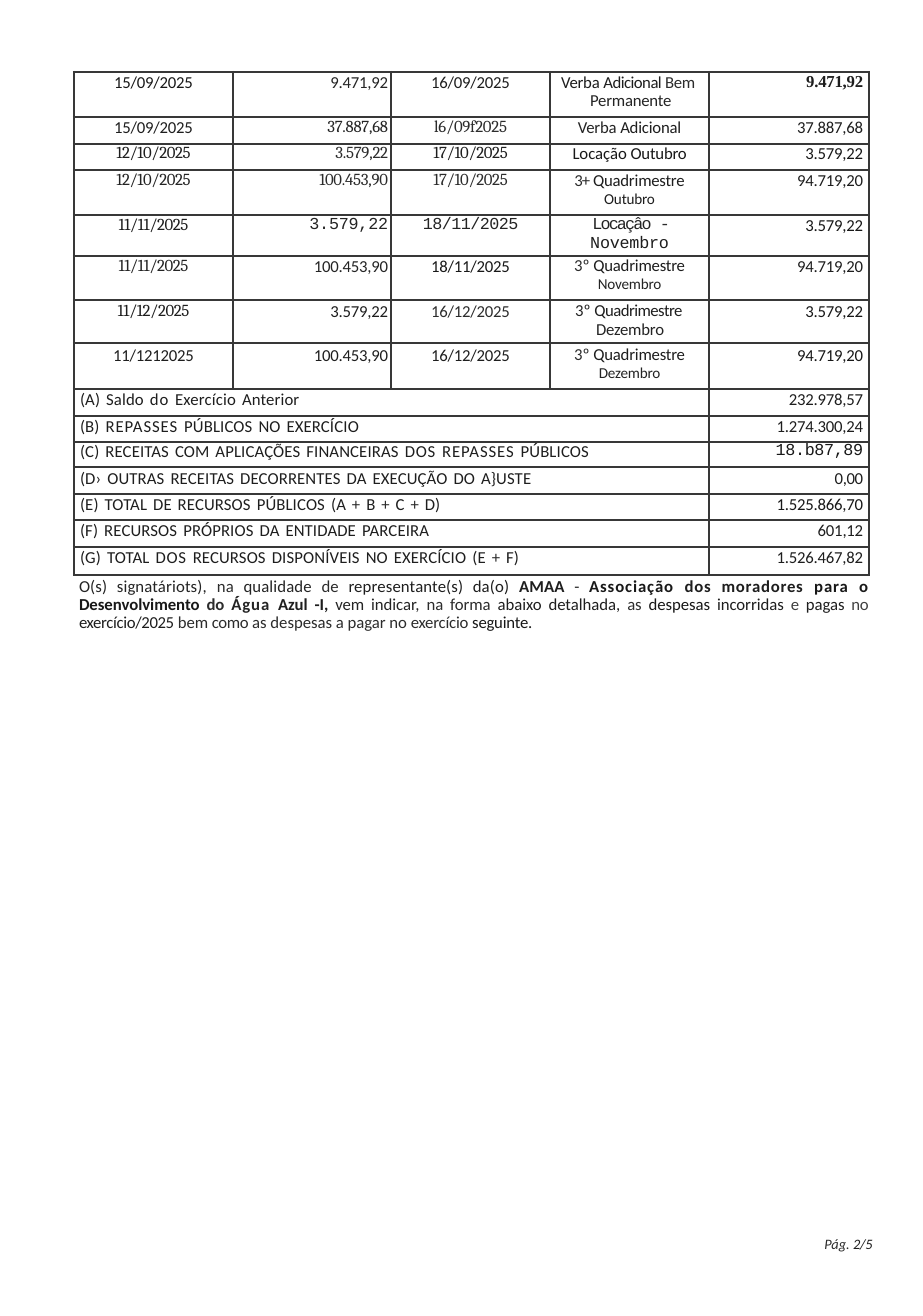
import pptx
import pptx.dml.color
import pptx.enum.text
import pptx.oxml
import pptx.oxml.ns
import pptx.util
from dataclasses import dataclass, field

Pt = pptx.util.Pt
ALIGN = pptx.enum.text.PP_ALIGN
EMU_PER_PX = 7958


@dataclass
class Theme:
    sans: str = "Calibri"
    serif: str = "Cambria"
    mono: str = "Courier New"
    times: str = "Times New Roman"
    body: float = 10.5
    small: float = 9.5
    page: float = 9
    rule: str = "383838"
    rule_width: float = 1.5
    word_gap: float = 1.3
    inks: dict = field(default_factory=lambda: {
        "deep": "181818", "dark": "1E1E1E", "mid": "242424",
        "soft": "2C2C2C", "pale": "404040"})


TH = Theme()


def run(text, ink="dark", spc=0, **fmt):
    return text, ink, spc, fmt


def par(*runs, **fmt):
    return runs, fmt


def date(text, ink="dark", spc=0, font=TH.sans):
    return [par(run(text, ink, spc, name=font), alignment=ALIGN.CENTER)]


def value(text, ink="dark", spc=0, font=TH.sans, **fmt):
    return [par(run(text, ink, spc, name=font, **fmt), alignment=ALIGN.RIGHT)]


def quarter(number, month, ink="mid", spc=0):
    """Two centred lines: the four-month period and, smaller, its month."""
    return [par(run(number, "soft", spc), run("Quadrimestre", "dark", -0.1),
                alignment=ALIGN.CENTER, line_spacing=Pt(12.4)),
            par(run(month, ink, -0.1, size=Pt(TH.small)),
                alignment=ALIGN.CENTER, line_spacing=Pt(11.2))]


def hanging(left, indent, *runs):
    return [par(*runs, line_spacing=Pt(11.4), left=left, indent=indent)]


def centred(*runs):
    return [par(*runs, alignment=ALIGN.CENTER)]


def label(text):
    """Summary label with widened word gaps and a few letterspaced words."""
    spread = {"do": 0.6, "REPASSES": 0.6, "DOS": 0.5}
    words = text.split(" ")
    runs = []
    for i, word in enumerate(words):
        ink = "soft" if word == "+" else "dark"
        runs.append(run(word, ink, spread.get(word, 0.1)))
        if i < len(words) - 1:
            runs.append(run(" ", ink, TH.word_gap))
    return [par(*runs, left=6)]


# (height, top inset, cells)
LEDGER = [
    (45, 1, [date("15/09/2025", "deep", -0.1), value("9.471,92", "mid", -0.1),
             date("16/09/2025", spc=-0.1),
             hanging(40, -29, run("Verba ", "dark", -0.1), run("Adicional ", "dark", -0.3),
                     run("Bem ", "soft", -0.2), run("Permanente", "mid", -0.1)),
             value("9.471,92", spc=-0.1, font=TH.times, bold=True)]),
    (27, 1, [date("15/09/2025", spc=-0.1), value("37.887,68", "mid", -0.1, TH.serif),
             date("l6/09f2025", "soft", -0.1, TH.serif),
             centred(run("Verba ", "mid", -0.1), run("Adicional", "dark", -0.1)),
             value("37.887,68", spc=-0.1)]),
    (26, 0, [date("12/10/2025", "dark", -0.2, TH.serif), value("3.579,22", "soft", -0.1, TH.serif),
             date("17/10/2025", "dark", -0.2, TH.serif),
             centred(run("Locação ", "deep"), run("Outubro", "deep", -0.1)),
             value("3.579,22", "deep", -0.1)]),
    (45, 1, [date("12/10/2025", "mid", -0.2, TH.serif),
             value("100.453,90", "soft", -0.1, TH.serif),
             date("17/10/2025", "soft", -0.2, TH.serif),
             quarter("3+ ", "Outubro", "dark", -0.6), value("94.719,20", spc=-0.1)]),
    (26, 1, [date("11/11/2025", "dark", -0.2, TH.serif), value("3.579,22", "mid", -0.1, TH.mono),
             date("18/11/2025", "mid", -0.3, TH.mono),
             centred(run("Locaçâo ", "mid", -1.1, name=TH.mono),
                     run("- ", "soft", -1.9, name=TH.mono),
                     run("Novembro", "dark", -0.1, name=TH.mono)),
             value("3.579,22", "deep", -0.1)]),
    (44, 0, [date("11/11/2025", "mid", -0.2, TH.serif), value("100.453,90", "mid", -0.1),
             date("18/11/2025", "deep", -0.1), quarter("3º ", "Novembro"),
             value("94.719,20", spc=-0.1)]),
    (43, 1, [date("11/12/2025", "dark", -0.2, TH.serif), value("3.579,22", spc=-0.1),
             date("16/12/2025", "soft", -0.1),
             hanging(46, -21, run("3º ", "mid"), run("Quadrimestre ", "dark", -0.3),
                     run("Dezembro", "mid", -0.1)),
             value("3.579,22", "deep", -0.1)]),
    (46, 2, [date("11/1212025", spc=-0.1), value("100.453,90", spc=-0.1),
             date("16/12/2025", spc=-0.1), quarter("3º ", "Dezembro"),
             value("94.719,20", "deep", -0.1)]),
]
SUMMARY = [
    (27, 1, "(A) Saldo do Exercício Anterior", value("232.978,57", spc=-0.1)),
    (26, 1, "(B) REPASSES PÚBLICOS NO EXERCÍCIO", value("1.274.300,24", spc=-0.1)),
    (25, 0, "(C) RECEITAS COM APLICAÇÕES FINANCEIRAS DOS REPASSES PÚBLICOS",
     value("18.b87,89", "deep", -0.2, TH.mono)),
    (27, 2, "(D› OUTRAS RECEITAS DECORRENTES DA EXECUÇÃO DO A}USTE", value("0,00", spc=-0.2)),
    (26, 1, "(E) TOTAL DE RECURSOS PÚBLICOS (A + B + C + D)",
     value("1.525.866,70", "deep", -0.1)),
    (27, 1, "(F) RECURSOS PRÓPRIOS DA ENTIDADE PARCEIRA", value("601,12", spc=-0.1)),
    (28, 1, "(G) TOTAL DOS RECURSOS DISPONÍVEIS NO EXERCÍCIO (E + F)",
     value("1.526.467,82", spc=-0.1)),
]
COLUMNS = [159, 158, 159, 159, 160]
RIGHT_INSETS = [0, 3, 0, 0, 6]

DECLARATION = par(
    run("O(s) signatáriots), ", "mid", 0.1), run("na ", "soft", 0.1),
    run("qualidade ", "mid", 0.1), run("de ", "soft", 0.1),
    run("representante(s) da(o) ", "dark", 0.1), run("AMAA ", "dark", 0.1, bold=True),
    run("- ", "mid", 0.1), run("Associação ", "deep", 0.6, bold=True),
    run("dos moradores ", "dark", 0.5, bold=True), run("para ", "deep", 0.6, bold=True),
    run("o ", "deep", 0.1, bold=True), run("Desenvolvimento ", "deep", bold=True),
    run("do ", "soft", bold=True), run("Água ", "mid", 0.6, bold=True),
    run("Azul -I, ", "dark", bold=True), run("vem indicar, ", "mid"),
    run("na forma ", "soft"), run("abaixo detalhada, ", "dark"), run("as ", "soft"),
    run("despesas ", "deep"), run("incorridas ", "dark"), run("e ", "pale"),
    run("pagas ", "dark"), run("no ", "pale", -0.2), run("exercício/2025 ", "dark", -0.2),
    run("bem ", "soft"), run("como ", "soft", -0.2), run("as despesas a pagar no ", "soft"),
    run("exercício ", "soft", -0.1), run("seguinte.", "deep", -0.1),
    alignment=ALIGN.JUSTIFY, line_spacing=0.89, left=1)


def px(n):
    return pptx.util.Emu(n * EMU_PER_PX)


class Page:
    def __init__(self, prs, theme):
        self.theme = theme
        self.slide = prs.slides.add_slide(prs.slide_layouts[6])

    def fill_text(self, tf, paragraphs):
        for i, (runs, fmt) in enumerate(paragraphs):
            p = tf.add_paragraph() if i else tf.paragraphs[0]
            for key, val in fmt.items():
                if key in ("left", "indent"):
                    p._p.get_or_add_pPr().set("marL" if key == "left" else key, str(px(val)))
                else:
                    setattr(p, key, val)
            for text, ink, spc, extra in runs:
                r = p.add_run()
                r.text = text
                style = {"name": self.theme.sans, "size": Pt(self.theme.body),
                         "bold": False, **extra}
                for key, val in style.items():
                    setattr(r.font, key, val)
                r.font.color.rgb = pptx.dml.color.RGBColor.from_string(self.theme.inks[ink])
                if spc:
                    r._r.get_or_add_rPr().set("spc", str(round(spc * 100)))

    def text(self, x, y, w, h, paragraph, top=0):
        tf = self.slide.shapes.add_textbox(px(x), px(y), px(w), px(h)).text_frame
        for key, val in {"word_wrap": True, "margin_left": 0, "margin_top": px(top),
                         "margin_right": 0, "margin_bottom": 0}.items():
            setattr(tf, key, val)
        self.fill_text(tf, [paragraph])

    def border(self, cell):
        tc_pr = cell._tc.get_or_add_tcPr()
        for side in ("lnL", "lnR", "lnT", "lnB"):
            tc_pr.append(pptx.oxml.parse_xml(
                f'<a:{side} {pptx.oxml.ns.nsdecls("a")} w="{Pt(self.theme.rule_width)}">'
                f'<a:solidFill><a:srgbClr val="{self.theme.rule}"/></a:solidFill></a:{side}>'))
        cell.fill.background()

    def table(self, x, y, columns, rows):
        """Rows are (height, top inset, cells); a None cell joins the one to its left."""
        heights = [row[0] for row in rows]
        tbl = self.slide.shapes.add_table(len(rows), len(columns), px(x), px(y),
                                          px(sum(columns)), px(sum(heights))).table
        tbl.first_row = tbl.horz_banding = False
        for col, width in zip(tbl.columns, columns):
            col.width = px(width)
        for i, (height, top, cells) in enumerate(rows):
            tbl.rows[i].height = px(height)
            for j, content in enumerate(cells):
                cell = tbl.cell(i, j)
                hangs = bool(content) and content[0][1].get("indent", 0) < 0
                for key, val in {"margin_left": 0, "margin_right": px(RIGHT_INSETS[j]),
                                 "margin_top": px(top + 2 * hangs),
                                 "margin_bottom": 0}.items():
                    setattr(cell, key, val)
                self.border(cell)
                if content:
                    self.fill_text(cell.text_frame, content)
            if None in cells:
                tbl.cell(i, 0).merge(tbl.cell(i, cells.index(None) + cells.count(None) - 1))


def main():
    prs = pptx.Presentation()
    prs.slide_width, prs.slide_height = pptx.util.Inches(8.03), pptx.util.Inches(11.45)
    page = Page(prs, TH)
    summary = [(h, top, [label(text), None, None, None, total])
               for h, top, text, total in SUMMARY]
    page.text(824, 1236, 51, 21, par(
        run("Pág. ", "soft", size=Pt(TH.page), italic=True),
        run("2/5", "dark", -0.2, size=Pt(TH.page), italic=True), line_spacing=Pt(9.8)))
    page.table(74, 72, COLUMNS, LEDGER + summary)
    page.text(78, 573, 790, 60, DECLARATION, top=5)
    prs.save("out.pptx")


if __name__ == "__main__":
    main()
